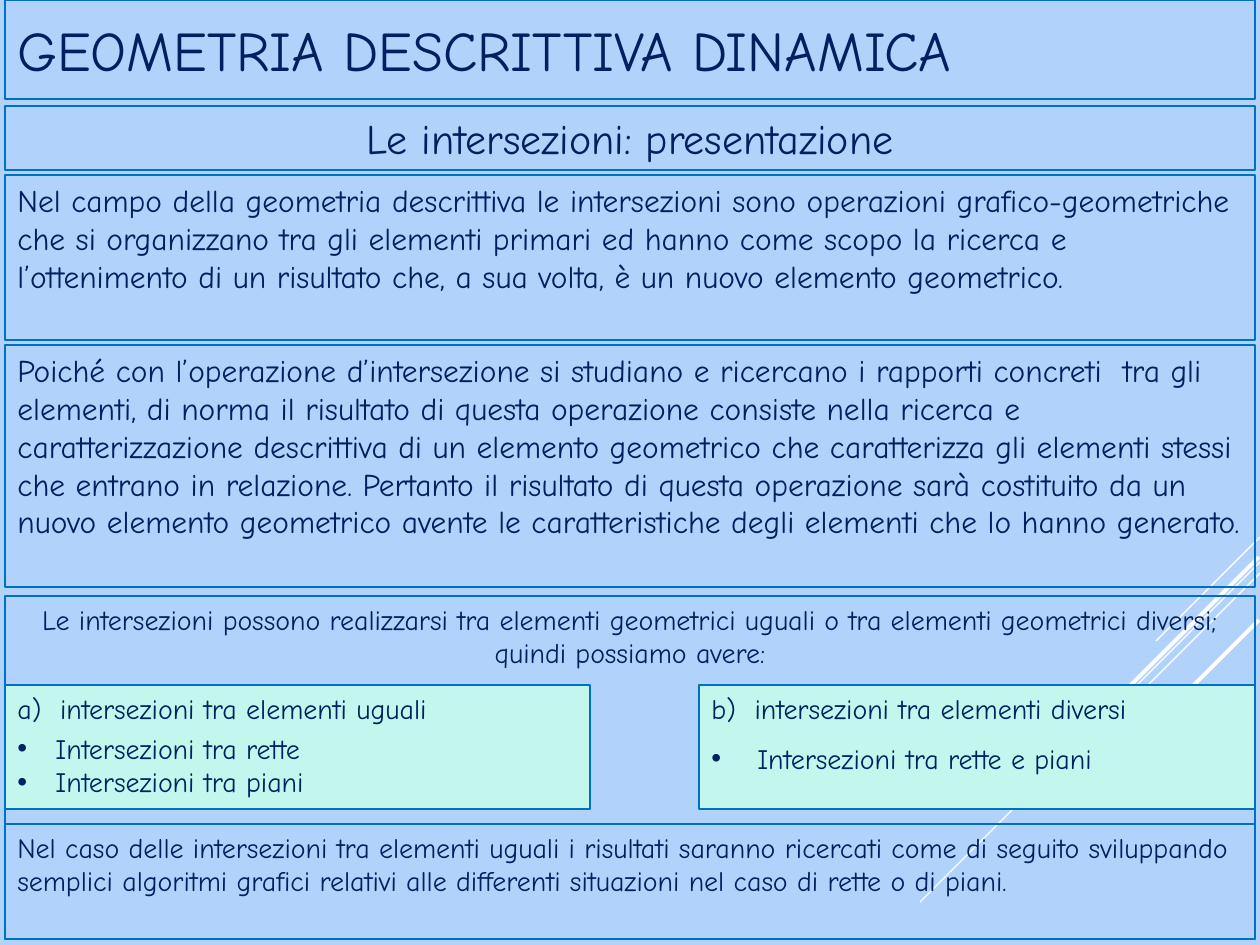
import pptx
import pptx.util
import pptx.dml.color
import pptx.enum.shapes
import pptx.enum.text
import pptx.oxml.ns
import lxml.etree

FONT = "Comic Neue"
NAVY, BLUE, MINT, SKY, WHITE = "002060", "0070C0", "C3F7ED", "B1D3FB", "FFFFFF"
LEFT, WIDE = 5, 1250
ALIGN = pptx.enum.text.PP_ALIGN
ANCHOR = pptx.enum.text.MSO_ANCHOR


def px(n):
    """Turn px into EMU."""
    return pptx.util.Emu(round(n * 914400 / 126))


def hue(code):
    """Turn a hex string into a colour."""
    return pptx.dml.color.RGBColor.from_string(code)


def add_xml(node, tag, **attrs):
    """Add a drawing element to a node."""
    return lxml.etree.SubElement(node, pptx.oxml.ns.qn(tag), attrs)


def write(para, text, size, align=ALIGN.LEFT):
    """Fill one paragraph."""
    para.text = text
    para.alignment = align
    para.font.name = FONT
    para.font.size = pptx.util.Pt(size)
    para.font.color.rgb = hue(NAVY)


def panel(slide, box, text, size, align=ALIGN.LEFT, anchor=ANCHOR.TOP, fill=None, line=0.75):
    """Draw a framed box with one paragraph."""
    rect = pptx.enum.shapes.MSO_SHAPE.RECTANGLE
    shape = slide.shapes.add_shape(rect, *map(px, box))
    shape.shadow.inherit = False
    if fill:
        shape.fill.solid()
        shape.fill.fore_color.rgb = hue(fill)
    else:
        shape.fill.background()
    shape.line.color.rgb = hue(BLUE)
    shape.line.width = pptx.util.Pt(line)
    frame = shape.text_frame
    frame.word_wrap = True
    frame.vertical_anchor = anchor
    write(frame.paragraphs[0], text, size, align)


def bullets(slide, box, items, indent):
    """Write a bulleted list in a box."""
    frame = slide.shapes.add_textbox(*map(px, box)).text_frame
    frame.word_wrap = True
    for i, item in enumerate(items):
        para = frame.add_paragraph() if i else frame.paragraphs[0]
        write(para, item, 16)
        props = para._p.get_or_add_pPr()
        props.set("marL", str(px(indent)))
        props.set("indent", str(-px(indent)))
        mark = add_xml(props, "a:buFont", typeface="Arial")
        dot = add_xml(props, "a:buChar", char="•")
        props.insert(0, dot)
        props.insert(0, mark)


def card(slide, box, head, items, drop, indent):
    """Draw a mint card with a heading and a list."""
    x, y, w, h = box
    panel(slide, box, head, 16, fill=MINT)
    bullets(slide, (x, y + drop, w, h - drop), items, indent)


def rays(slide, box):
    """Draw the slanted white lines in the corner."""
    x, y, w, h = box
    for top, start, end, width in (
        (0, 236, 340, 0.75),
        (25, 0, 340, 0.75),
        (36, 123, 340, 0.75),
        (20, 140, 339, 2.25),
        (83, 195, 339, 2.25),
    ):
        ends = (x + end, y + top, x + start, y + top + end - start)
        ray = slide.shapes.add_connector(
            pptx.enum.shapes.MSO_CONNECTOR.STRAIGHT, *map(px, ends))
        ray.line.color.rgb = hue(WHITE)
        ray.line.width = pptx.util.Pt(width)
        add_xml(ray._element.spPr, "a:effectLst")


def main():
    """Build the slide and save it."""
    deck = pptx.Presentation()
    deck.slide_width, deck.slide_height = px(1260), px(945)
    slide = deck.slides.add_slide(deck.slide_layouts[6])
    slide.background.fill.solid()
    slide.background.fill.fore_color.rgb = hue(SKY)

    rays(slide, (920, 537, 340, 366))
    panel(slide, (LEFT, 0, WIDE, 99), "GEOMETRIA DESCRITTIVA DINAMICA", 32,
          anchor=ANCHOR.MIDDLE, line=1)
    panel(slide, (LEFT, 106, WIDE, 64), "Le intersezioni: presentazione", 24,
          align=ALIGN.CENTER)
    panel(slide, (LEFT, 175, WIDE, 165),
          "Nel campo della geometria descrittiva le intersezioni sono operazioni "
          "grafico-geometriche che si organizzano tra gli elementi primari ed hanno "
          "come scopo la ricerca e l’ottenimento di un risultato che, a sua volta, "
          "è un nuovo elemento geometrico.", 18)
    panel(slide, (LEFT, 345, WIDE, 242),
          "Poiché con l’operazione d’intersezione si studiano e ricercano i rapporti "
          "concreti  tra gli elementi, di norma il risultato di questa operazione "
          "consiste nella ricerca e caratterizzazione descrittiva di un elemento "
          "geometrico che caratterizza gli elementi stessi che entrano in relazione. "
          "Pertanto il risultato di questa operazione sarà costituito da un nuovo "
          "elemento geometrico avente le caratteristiche degli elementi che lo hanno "
          "generato.", 18)
    panel(slide, (LEFT, 596, WIDE, 343),
          "Le intersezioni possono realizzarsi tra elementi geometrici uguali o tra "
          "elementi geometrici diversi; quindi possiamo avere:", 16, align=ALIGN.CENTER)
    card(slide, (LEFT, 685, 585, 124), "a)  intersezioni tra elementi uguali",
         ("Intersezioni tra rette", "Intersezioni tra piani"), 40, 38)
    card(slide, (699, 685, 556, 124), "b)  intersezioni tra elementi diversi",
         ("Intersezioni tra rette e piani",), 50, 46)
    panel(slide, (LEFT, 824, WIDE, 115),
          "Nel caso delle intersezioni tra elementi uguali i risultati saranno ricercati "
          "come di seguito sviluppando semplici algoritmi grafici relativi alle differenti "
          "situazioni nel caso di rette o di piani.", 16)
    deck.save("out.pptx")


if __name__ == "__main__":
    main()
